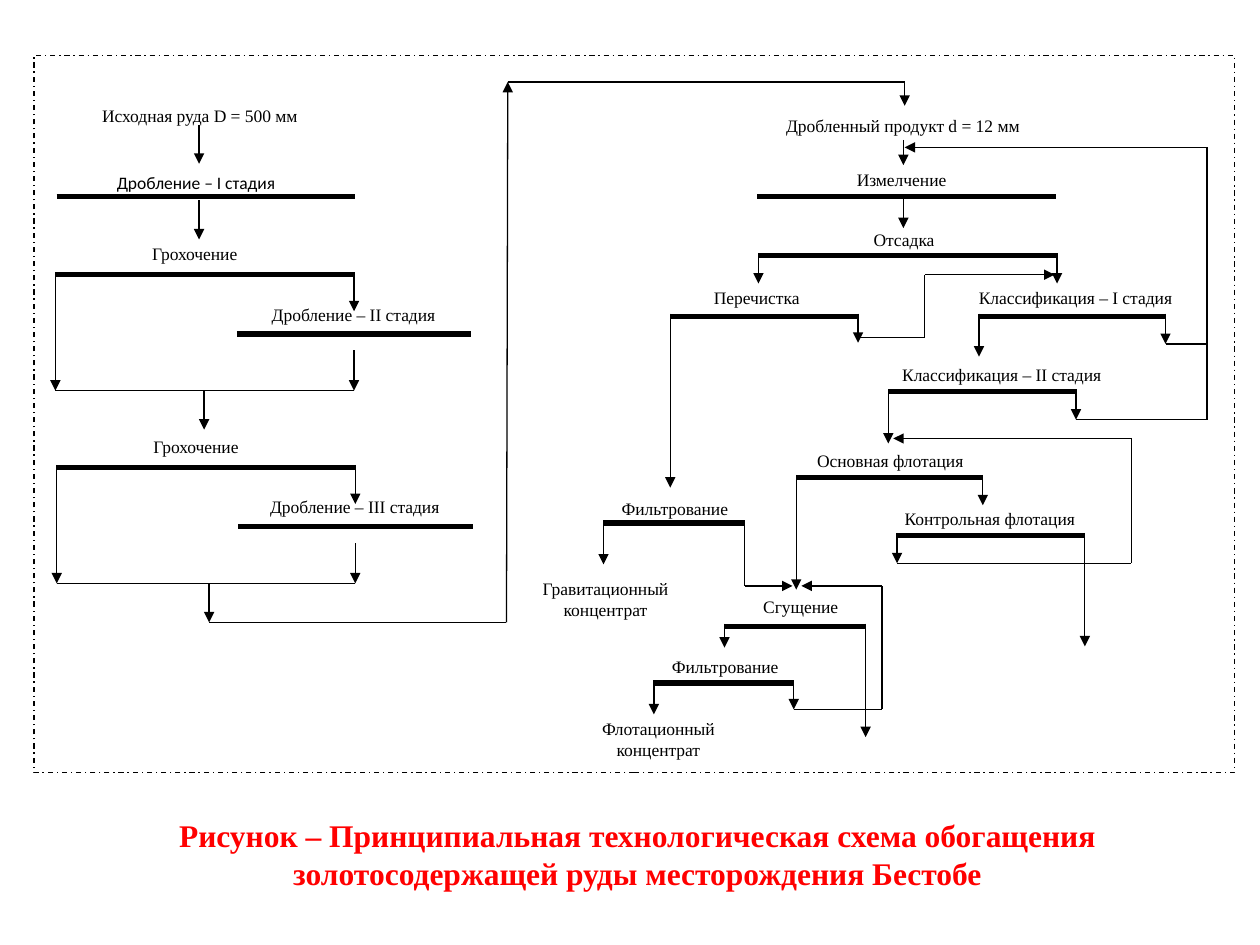
from itertools import pairwise

from lxml import etree
from pptx import Presentation
from pptx.dml.color import RGBColor
from pptx.enum.dml import MSO_LINE
from pptx.enum.shapes import MSO_CONNECTOR, MSO_SHAPE
from pptx.enum.text import MSO_ANCHOR, PP_ALIGN
from pptx.oxml.ns import qn
from pptx.util import Emu, Pt

EMU_PER_PX = 9144  # 100 px to the inch


def px(n):
    return Emu(n * EMU_PER_PX)


def color(value):
    return RGBColor.from_string(value)


class Flowsheet:
    font, size, ink, paper = "Times New Roman", 10, "000000", "FFFFFF"
    thin, thick = 0.75, 3

    def __init__(self, prs):
        self.s = prs.slides.add_slide(prs.slide_layouts[6])

    def frame(self, x, y, w, h):
        sp = self.s.shapes.add_shape(MSO_SHAPE.RECTANGLE, px(x), px(y), px(w), px(h))
        sp.shadow.inherit = False
        sp.fill.solid()
        sp.fill.fore_color.rgb = color(self.paper)
        sp.line.color.rgb = color(self.ink)
        sp.line.width = Pt(self.thin)
        sp.line.dash_style = MSO_LINE.DASH_DOT

    def text(self, text, x, y, w, h=26, side=10, font=None, size=None,
             ink=None, bold=False, spacing=None):
        tf = self.s.shapes.add_textbox(px(x), px(y), px(w), px(h)).text_frame
        tf.word_wrap = True
        tf.vertical_anchor = MSO_ANCHOR.TOP
        tf.margin_left = tf.margin_right = px(side)
        tf.margin_top = tf.margin_bottom = px(5)
        p = tf.paragraphs[0]
        p.text = text
        p.alignment = PP_ALIGN.CENTER
        p.line_spacing = spacing
        p.font.name = font or self.font
        p.font.size = Pt(size or self.size)
        p.font.bold = bold
        p.font.color.rgb = color(ink or self.ink)

    def line(self, start, end, width=thin, arrow=False):
        c = self.s.shapes.add_connector(
            MSO_CONNECTOR.STRAIGHT, *map(px, start), *map(px, end))
        c.line.color.rgb = color(self.ink)
        c.line.width = Pt(width)
        if arrow:
            etree.SubElement(c.line._get_or_add_ln(), qn("a:tailEnd"), type="triangle")
        etree.SubElement(c._element.spPr, qn("a:effectLst"))

    def route(self, *points, arrow=True):
        """Join the points by straight lines, with an arrowhead at the last one."""
        for start, end in pairwise(points):
            self.line(start, end, arrow=arrow and end == points[-1])

    def operation(self, name, box, bar, left=None, right=None, **style):
        """Label (x, y, w) over a bar (x1, x2, y); arrows fall from its ends."""
        x1, x2, y = bar
        self.line((x1, y), (x2, y), self.thick)
        for x, bottom in ((x1, left), (x2, right)):
            if bottom:
                self.route((x, y - 2), (x, bottom))
        self.text(name, *box, **style)


def crushing(f):
    f.text("Исходная руда D = 500 мм", 54, 76, 209, 33, side=2, spacing=1.15)
    f.route((158, 99), (158, 130))
    f.operation("Дробление – І стадия", (70, 129, 171), (45, 282, 156),
                font="Calibri", spacing=1.15)
    f.route((158, 159), (158, 190))

    for x, y, stage, drop in ((44, 218, "ІІ", 162), (45, 371, "ІІІ", 166)):
        right, bottom = x + 237, y + 92
        f.operation("Грохочение", (x + 25, y - 30, 171), (x, right, y),
                    bottom, y + 29)
        f.operation(f"Дробление – {stage} стадия", (x + 151, y + 18, 171),
                    (x + 144, x + 330, y + 47))
        f.route((right, y + 60), (right, bottom))
        f.route((x, bottom), (right, bottom), arrow=False)
        f.route((drop, bottom), (drop, bottom + 31))

    f.route((166, 494), (402, 494), (403, 65))
    f.route((403, 65), (718, 65), (718, 84))


def concentration(f):
    f.text("Дробленный продукт d = 12 мм", 612, 86, 209, 25, side=2)
    f.route((717, 111), (717, 131))
    f.operation("Измелчение", (630, 129, 171), (601, 838, 156))
    f.route((717, 157), (717, 181))

    operations = [
        ("Отсадка", (632, 177, 171), (602, 839, 203), 225, 225),
        ("Перечистка", (515, 223, 171), (532, 681, 251), 387, 272),
        ("Классификация – І стадия", (765, 223, 177), (777, 925, 251), 283, 273),
        ("Классификация – ІІ стадия", (693, 284, 204), (705, 854, 311), 352, 333),
        ("Основная флотация", (621, 352, 171), (632, 780, 379), 468, 401),
        ("Контрольная флотация", (700, 398, 171), (712, 861, 425), 447, 513),
        ("Фильтрование", (470, 390, 131), (479, 591, 415), 448, None),
        ("Сгущение", (570, 468, 131), (575, 687, 497), 514, 585),
        ("Фильтрование", (510, 516, 131), (519, 630, 542), 567, 563),
    ]
    for operation in operations:
        f.operation(*operation)

    f.text("Гравитационный концентрат", 415, 454, 131, 43)
    f.text("Флотационный концентрат", 457, 565, 131, 48)

    f.route((681, 268), (734, 268), (734, 218), (837, 218))
    f.route((854, 333), (958, 333), (958, 117), (718, 117))
    f.route((925, 273), (958, 273), arrow=False)
    f.route((712, 447), (898, 447), (898, 348), (709, 348))
    f.route((591, 413), (591, 465), (629, 465))
    f.route((630, 563), (700, 563), (700, 465), (636, 465))


def main():
    prs = Presentation()
    prs.slide_width, prs.slide_height = px(1000), px(750)
    f = Flowsheet(prs)
    f.frame(27, 44, 953, 569)
    crushing(f)
    concentration(f)
    f.text("Рисунок – Принципиальная технологическая схема обогащения "
           "золотосодержащей руды месторождения Бестобе",
           31, 643, 950, 71, size=18, ink="FF0000", bold=True)
    prs.save("out.pptx")


if __name__ == "__main__":
    main()
